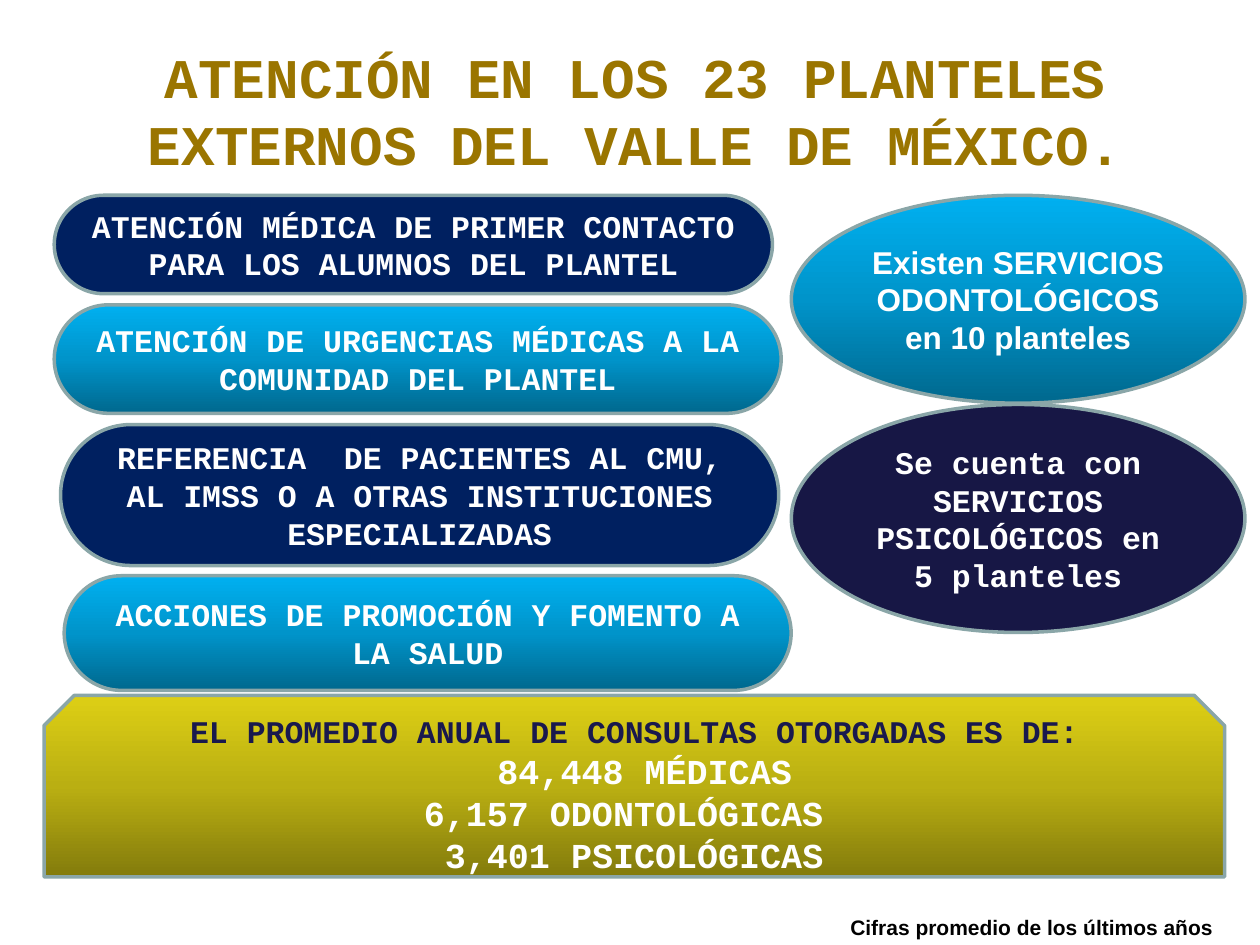
from lxml import etree
from pptx import Presentation
from pptx import util as u
from pptx.dml.color import RGBColor
from pptx.enum import shapes, text
from pptx.oxml.ns import qn

WHITE = RGBColor(0xFF, 0xFF, 0xFF)
BLACK = RGBColor(0, 0, 0)
NAVY = RGBColor(0x00, 0x20, 0x60)
INDIGO = RGBColor(0x17, 0x17, 0x45)
INK = RGBColor(0x19, 0x19, 0x4D)
GOLD = RGBColor(0x9A, 0x75, 0x00)
OUTLINE = RGBColor(0x8A, 0xA6, 0xA8)
# Gradients run from the bottom edge to the top edge
SKY = [RGBColor(0x00, 0x68, 0x8E), RGBColor(0x00, 0x94, 0xCA), RGBColor(0x00, 0xB0, 0xF0)]
OLIVE = [RGBColor(0x83, 0x7B, 0x0C), RGBColor(0xBA, 0xAF, 0x12), RGBColor(0xDD, 0xCF, 0x15)]

MONO, SANS = "Courier New", "Arial"
PILL = shapes.MSO_SHAPE.ROUNDED_RECTANGLE
OVAL = shapes.MSO_SHAPE.OVAL
SNIPPED = shapes.MSO_SHAPE.SNIP_2_SAME_RECTANGLE
CENTER, LEFT = text.PP_ALIGN.CENTER, text.PP_ALIGN.LEFT

TITLE = "ATENCIÓN EN LOS 23 PLANTELES EXTERNOS DEL VALLE DE MÉXICO."
FOOTNOTE = "Cifras promedio de los últimos años"

# Box (left, top, width, height), fill, wording
SERVICES = [
    ((31, 111.6, 410.4, 56.2), NAVY,
     "ATENCIÓN MÉDICA DE PRIMER CONTACTO PARA LOS ALUMNOS DEL PLANTEL"),
    ((31, 174.2, 415.4, 62), SKY,
     "ATENCIÓN DE URGENCIAS MÉDICAS A LA COMUNIDAD DEL PLANTEL"),
    ((34.6, 242.6, 410.4, 80.6), NAVY,
     "REFERENCIA  DE PACIENTES AL CMU, AL IMSS O A OTRAS INSTITUCIONES ESPECIALIZADAS"),
    ((36.7, 329, 415.4, 65.5), SKY,
     "ACCIONES DE PROMOCIÓN Y FOMENTO A LA SALUD"),
]
# Box, fill, font, wording
SPECIALTIES = [
    ((452.2, 111.6, 259.2, 118.8), SKY, SANS,
     "Existen SERVICIOS ODONTOLÓGICOS en 10 planteles"),
    ((452.2, 231.1, 259.2, 130.3), INDIGO, MONO,
     "Se cuenta con SERVICIOS PSICOLÓGICOS en 5 planteles"),
]
TOTALS_BOX = (25.2, 397.4, 674.6, 103.7)
# Wording, size, colour
TOTALS = [
    ("EL PROMEDIO ANUAL DE CONSULTAS OTORGADAS ES DE:", 18, INK),
    (" 84,448 MÉDICAS", 20, WHITE),
    ("6,157 ODONTOLÓGICAS ", 20, WHITE),
    ("3,401 PSICOLÓGICAS", 20, WHITE),
]


def points(box):
    return [u.Pt(length) for length in box]


def write(shape, lines, font=MONO, align=CENTER):
    """Put (wording, size, colour) lines in a shape, one paragraph each."""
    frame = shape.text_frame
    frame.word_wrap = True
    frame.text = "\n".join(wording for wording, _, _ in lines)
    for paragraph, (_, size, color) in zip(frame.paragraphs, lines):
        paragraph.alignment = align
        for run in paragraph.runs:
            run.font.name = font
            run.font.size = u.Pt(size)
            run.font.bold = True
            run.font.color.rgb = color


def paint(fill, color):
    """Fill with one colour, or with a vertical gradient for a list of colours."""
    if isinstance(color, RGBColor):
        fill.solid()
        fill.fore_color.rgb = color
        return
    fill.gradient()
    fill.gradient_angle = 90
    stops = fill.gradient_stops[0]._gs.getparent()
    for stop in list(stops):
        stops.remove(stop)
    for index, stop_color in enumerate(color):
        position = 100000 * index // (len(color) - 1)
        stop = etree.SubElement(stops, qn("a:gs"), pos=str(position))
        etree.SubElement(stop, qn("a:srgbClr"), val=str(stop_color))


def add_panel(slide, kind, box, color, lines, font=MONO):
    panel = slide.shapes.add_shape(kind, *points(box))
    panel.shadow.inherit = False
    paint(panel.fill, color)
    panel.line.color.rgb = OUTLINE
    panel.line.width = u.Pt(2)
    panel.text_frame.vertical_anchor = text.MSO_ANCHOR.MIDDLE
    write(panel, lines, font)
    return panel


def main():
    presentation = Presentation()
    presentation.slide_width, presentation.slide_height = u.Pt(720), u.Pt(540)
    slide = presentation.slides.add_slide(presentation.slide_layouts[6])

    for box, color, wording in SERVICES:
        pill = add_panel(slide, PILL, box, color, [(wording, 18, WHITE)])
        pill.adjustments[0] = 0.5

    title = slide.shapes.add_textbox(*points((20.2, 20.9, 686.2, 85)))
    write(title, [(TITLE, 32, GOLD)])

    for box, color, font, wording in SPECIALTIES:
        add_panel(slide, OVAL, box, color, [(wording, 18, WHITE)], font)

    add_panel(slide, SNIPPED, TOTALS_BOX, OLIVE, TOTALS)

    footnote = slide.shapes.add_textbox(*points((478.8, 519.1, 224.6, 20.9)))
    write(footnote, [(FOOTNOTE, 12, BLACK)], SANS, LEFT)

    presentation.save("out.pptx")


if __name__ == "__main__":
    main()
